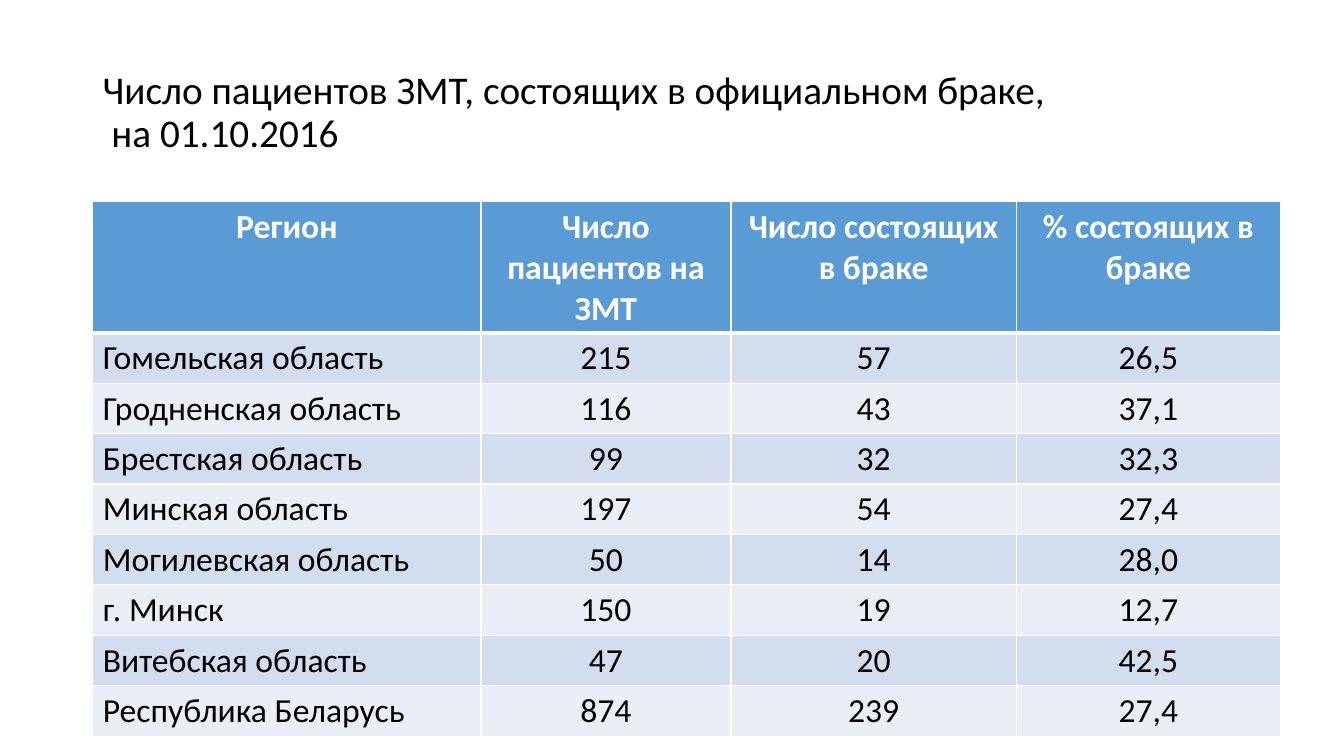
"""Build a slide with a table of married patients by region."""
from typing import NamedTuple

from lxml import etree
from pptx import Presentation
from pptx import util as u
from pptx.dml import color
from pptx.enum import text
from pptx.oxml import ns

COLORS = {
    "header": "5B9BD5",
    "odd": "D2DEEF",
    "even": "EAEFF7",
    "white": "FFFFFF",
    "black": "000000",
}
FONT = "Calibri"
TITLE = "Число пациентов ЗМТ, состоящих в официальном браке,\n на 01.10.2016"


class Column(NamedTuple):
    heading: str
    width: float
    align: text.PP_ALIGN


class Region(NamedTuple):
    name: str
    patients: str
    married: str
    percent: str


COLUMNS = [
    Column("Регион", 3.85, text.PP_ALIGN.LEFT),
    Column("Число пациентов на ЗМТ", 2.48, text.PP_ALIGN.CENTER),
    Column("Число состоящих в браке", 2.83, text.PP_ALIGN.CENTER),
    Column("% состоящих в браке", 2.62, text.PP_ALIGN.CENTER),
]
REGIONS = [
    Region("Гомельская область", "215", "57", "26,5"),
    Region("Гродненская область", "116", "43", "37,1"),
    Region("Брестская область", "99", "32", "32,3"),
    Region("Минская область", "197", "54", "27,4"),
    Region("Могилевская область", "50", "14", "28,0"),
    Region("г. Минск", "150", "19", "12,7"),
    Region("Витебская область", "47", "20", "42,5"),
    Region("Республика Беларусь", "874", "239", "27,4"),
]
ROW_HEIGHTS = [0.41] * 7 + [0.2] * 2


def format_runs(para, size: float, ink: str, bold: bool = False) -> None:
    for span in para.runs:
        span.font.name = FONT
        span.font.size = u.Pt(size)
        span.font.bold = bold
        span.font.color.rgb = color.RGBColor.from_string(COLORS[ink])


def set_borders(cell, top: float, bottom: float) -> None:
    properties = cell._tc.get_or_add_tcPr()
    for side, width in (("L", 1), ("R", 1), ("T", top), ("B", bottom)):
        line = etree.SubElement(properties, ns.qn(f"a:ln{side}"), w=str(u.Pt(width)))
        fill = etree.SubElement(line, ns.qn("a:solidFill"))
        etree.SubElement(fill, ns.qn("a:srgbClr"), val=COLORS["white"])


def add_title(page) -> None:
    box = page.shapes.add_textbox(
        u.Inches(0.92), u.Inches(0.4), u.Inches(11.5), u.Inches(1.45)
    )
    frame = box.text_frame
    frame.word_wrap = True
    frame.vertical_anchor = text.MSO_ANCHOR.MIDDLE
    para = frame.paragraphs[0]
    para.text = TITLE
    para.line_spacing = 0.9
    format_runs(para, 28, "black")


def fill_cell(cell, content: str, row: int, align: text.PP_ALIGN) -> None:
    is_header = row == 0
    set_borders(cell, top=3 if row == 1 else 1, bottom=3 if is_header else 1)
    shade = "header" if is_header else "odd" if row % 2 else "even"
    cell.fill.solid()
    cell.fill.fore_color.rgb = color.RGBColor.from_string(COLORS[shade])
    para = cell.text_frame.paragraphs[0]
    para.text = content
    para.alignment = text.PP_ALIGN.CENTER if is_header else align
    format_runs(para, 24, "white" if is_header else "black", is_header)


def add_region_table(page) -> None:
    rows = [[column.heading for column in COLUMNS], *REGIONS]
    table = page.shapes.add_table(
        len(rows), len(COLUMNS), u.Inches(0.92), u.Inches(2),
        u.Inches(sum(column.width for column in COLUMNS)),
        u.Inches(sum(ROW_HEIGHTS)),
    ).table
    for index, column in enumerate(COLUMNS):
        table.columns[index].width = u.Inches(column.width)
    for row, (values, height) in enumerate(zip(rows, ROW_HEIGHTS)):
        table.rows[row].height = u.Inches(height)
        for index, (content, column) in enumerate(zip(values, COLUMNS)):
            fill_cell(table.cell(row, index), content, row, column.align)


def main() -> None:
    deck = Presentation()
    deck.slide_width, deck.slide_height = u.Inches(13.33), u.Inches(7.5)
    page = deck.slides.add_slide(deck.slide_layouts[6])
    add_title(page)
    add_region_table(page)
    deck.save("out.pptx")


if __name__ == "__main__":
    main()
